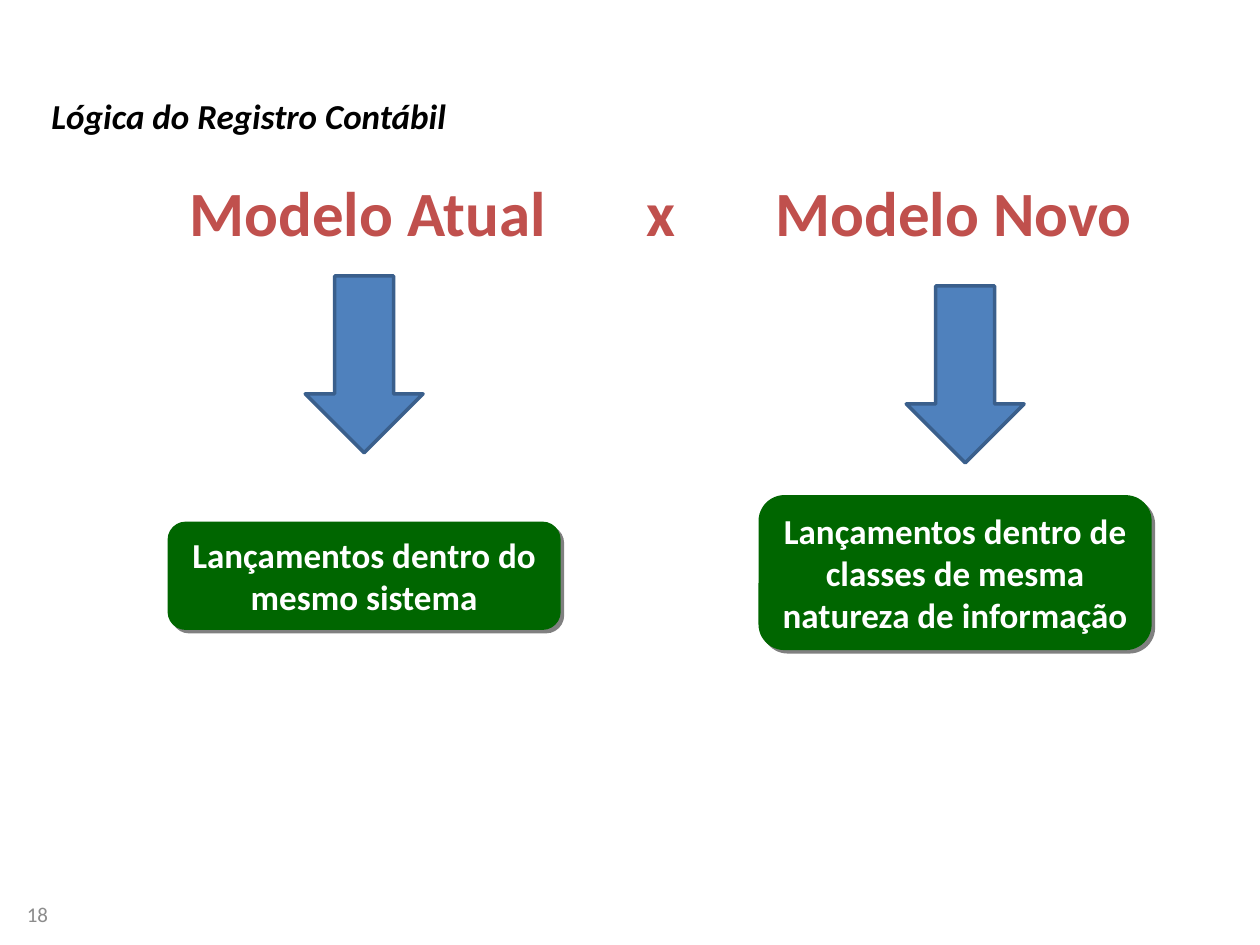
from dataclasses import dataclass
from lxml.etree import SubElement
from pptx import Presentation
from pptx.dml.color import RGBColor
from pptx.enum.shapes import MSO_SHAPE
from pptx.enum.text import MSO_ANCHOR, PP_ALIGN
from pptx.oxml.ns import qn
from pptx.util import Inches, Pt


@dataclass(frozen=True)
class Theme:
    """Colours, font and type sizes of the slide."""
    font: str = "Calibri"
    ink: str = "000000"
    red: str = "C0504D"
    green: str = "006600"
    blue: str = "4F81BD"
    edge: str = "3A5F8C"
    white: str = "FFFFFF"
    grey: str = "8C8C8C"
    shade: str = "808080"
    big: int = 36
    body: int = 20
    small: int = 12


THEME = Theme()
CELL = Inches(10) // 100


def grid(*cells):
    """Turn grid cells, a hundred to the slide's width, into lengths."""
    return [round(cell * CELL) for cell in cells]


def write(shape, text, size=THEME.body, color=THEME.ink, bold=True,
          italic=False, align=PP_ALIGN.LEFT, anchor=MSO_ANCHOR.TOP):
    """Put formatted text into a shape and return its paragraph."""
    frame = shape.text_frame
    frame.word_wrap = True
    frame.vertical_anchor = anchor
    para = frame.paragraphs[0]
    para.alignment = align
    run = para.add_run()
    run.text = text
    font = run.font
    font.name, font.size = THEME.font, Pt(size)
    font.bold, font.italic = bold, italic
    font.color.rgb = RGBColor.from_string(color)
    return para


def label(slide, box, text, **style):
    """Add a text box and return its paragraph."""
    return write(slide.shapes.add_textbox(*grid(*box)), text, **style)


def block(slide, kind, box, fill):
    """Add a plain filled shape without line or shadow."""
    shape = slide.shapes.add_shape(kind, *grid(*box))
    shape.shadow.inherit = False
    shape.fill.solid()
    shape.fill.fore_color.rgb = RGBColor.from_string(fill)
    shape.line.fill.background()
    return shape


def shade(shape):
    """Give a shape a hard shadow to the lower right."""
    list_ = shape.element.spPr.find(qn("a:effectLst"))
    cast = SubElement(list_, qn("a:outerShdw"), blurRad="0",
                      dist=str(Pt(2.8)), dir="2700000", algn="ctr",
                      rotWithShape="0")
    SubElement(cast, qn("a:srgbClr"), val=THEME.shade)


def header(slide, box, names, stops):
    """Set the compared names on centred tab stops."""
    para = label(slide, box, "".join("\t" + name for name in names),
                 size=THEME.big, color=THEME.red)
    tabs = SubElement(para._p.get_or_add_pPr(), qn("a:tabLst"))
    for stop in grid(*stops):
        SubElement(tabs, qn("a:tab"), pos=str(stop), algn="ctr")


def model(slide, box, text, tall, shift=0):
    """Place an arrow at the top of the box and a card at its foot."""
    left, top, wide, high = box
    card = block(slide, MSO_SHAPE.ROUNDED_RECTANGLE,
                 (left, top + high - tall, wide, tall), THEME.green)
    shade(card)
    write(card, text, color=THEME.white, align=PP_ALIGN.CENTER,
          anchor=MSO_ANCHOR.MIDDLE)
    span = wide * 0.3
    arrow = block(slide, MSO_SHAPE.DOWN_ARROW,
                  (left + (wide - span) / 2 + shift, top, span, span * 1.5),
                  THEME.blue)
    arrow.line.color.rgb = RGBColor.from_string(THEME.edge)
    arrow.line.width = Pt(2)


def main():
    """Build the slide and save it."""
    deck = Presentation()
    deck.slide_width, deck.slide_height = grid(100, 75)
    slide = deck.slides.add_slide(deck.slide_layouts[6])
    label(slide, (0, 71.1, 4.8, 2.9), "18", size=THEME.small,
          color=THEME.grey, bold=False, align=PP_ALIGN.RIGHT,
          anchor=MSO_ANCHOR.MIDDLE)
    header(slide, (6.2, 13.3, 87.5, 7.1),
           ("Modelo Atual", "x", "Modelo Novo"), (22, 45.25, 68.5))
    model(slide, (13.3, 21.9, 31.2, 28.1),
          "Lançamentos dentro do mesmo sistema", 8.6)
    model(slide, (60.2, 22.7, 31.2, 28.9),
          "Lançamentos dentro de classes de mesma natureza de informação",
          12.3, shift=0.8)
    label(slide, (3.1, 7, 92.2, 4.4), "Lógica do Registro Contábil",
          italic=True)
    deck.save("out.pptx")


if __name__ == "__main__":
    main()
